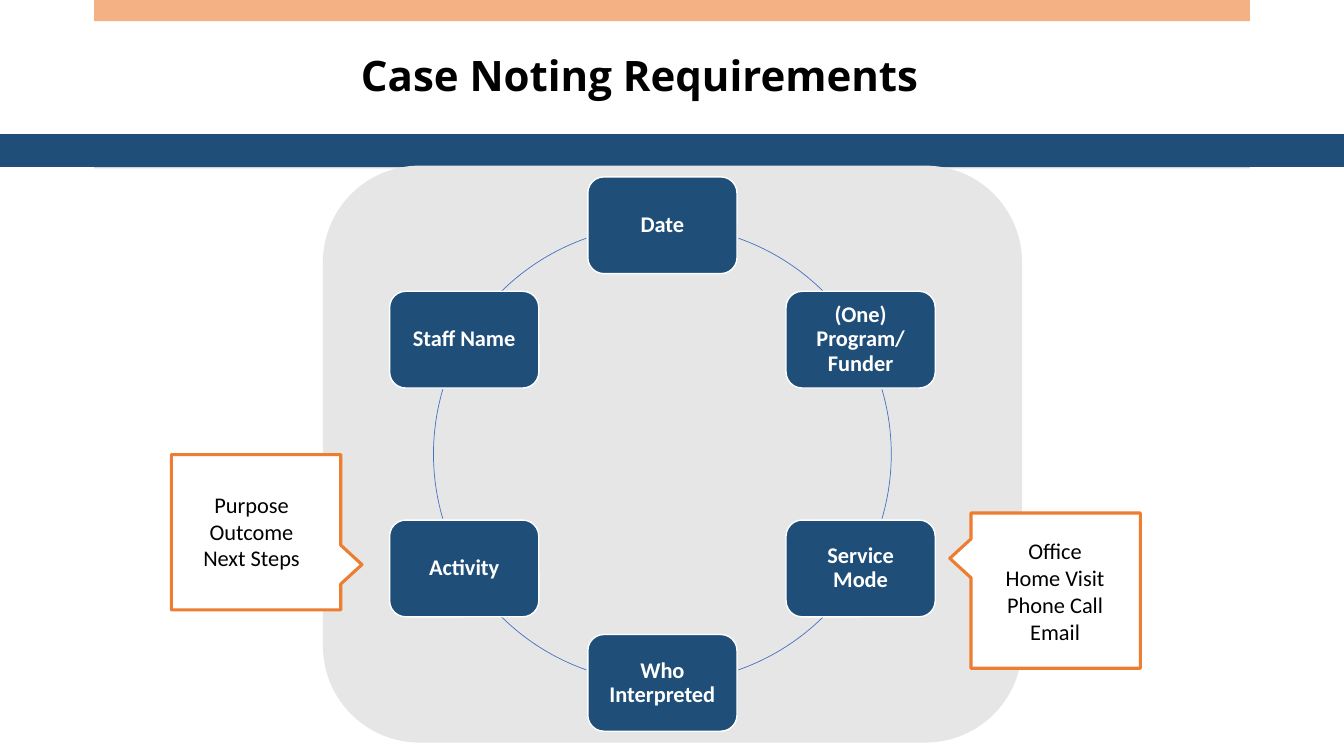
from dataclasses import dataclass
from math import cos, radians, sin

from pptx import Presentation
from pptx.dml.color import RGBColor
from pptx.enum.shapes import MSO_SHAPE
from pptx.enum.text import MSO_ANCHOR, MSO_AUTO_SIZE, PP_ALIGN
from pptx.util import Inches, Pt


@dataclass(frozen=True)
class Theme:
    navy: str = "1F4E79"
    peach: str = "F4B183"
    orange: str = "ED7D31"
    blue: str = "4472C4"
    panel: str = "E7E6E6"
    rule: str = "D5D5D5"
    white: str = "FFFFFF"
    black: str = "000000"
    title_font: str = "Open Sans"
    body_font: str = "Calibri"
    title_size: int = 30
    body_size: int = 16


THEME = Theme()
SLIDE_WIDTH, SLIDE_HEIGHT = 13.33, 7.5
STEPS = ["Date", "(One) Program/ Funder", "Service Mode",
         "Who Interpreted", "Activity", "Staff Name"]
NODE_WIDTH, NODE_HEIGHT = 1.48, 0.96
# Middle and half sweep, in degrees clockwise from east, of each visible arc
ARCS = [(302, 12.6), (0, 16.4), (58, 12.6), (122, 12.6), (180, 16.4), (238, 12.6)]


def add_box(slide, preset, box, fill=None, line=None, line_width=1):
    shape = slide.shapes.add_shape(preset, *map(Inches, box))
    shape.shadow.inherit = False
    if fill:
        shape.fill.solid()
        shape.fill.fore_color.rgb = RGBColor.from_string(fill)
    else:
        shape.fill.background()
    if line:
        shape.line.color.rgb = RGBColor.from_string(line)
        shape.line.width = Pt(line_width)
    else:
        shape.line.fill.background()
    return shape


def write(text_frame, text, font, size, color, bold=False, line_spacing=None):
    """Set centred text, one paragraph for each line of text."""
    text_frame.word_wrap = True
    text_frame.text = text
    for paragraph in text_frame.paragraphs:
        paragraph.alignment = PP_ALIGN.CENTER
        if line_spacing:
            paragraph.line_spacing = line_spacing
        for run in paragraph.runs:
            run.font.name = font
            run.font.size = Pt(size)
            run.font.bold = bold
            run.font.color.rgb = RGBColor.from_string(color)


def add_header(slide, left, top, width, height):
    margin = 0.07 * width
    inner_width = width - 2 * margin
    bar_top = top + 0.81 * height
    add_box(slide, MSO_SHAPE.RECTANGLE, (left + margin, top, inner_width, 0.21), THEME.peach)
    add_box(slide, MSO_SHAPE.RECTANGLE, (left + margin, top + height, inner_width, 0.02),
            THEME.rule)
    add_box(slide, MSO_SHAPE.RECTANGLE, (left, bar_top, width, 0.31), THEME.navy, THEME.navy)

    title = slide.shapes.title
    title.left, title.top = Inches(left + 1.97), Inches(top + 0.2)
    title.width, title.height = Inches(8.75), Inches(1.15)
    title.text_frame.auto_size = MSO_AUTO_SIZE.NONE
    title.text_frame.vertical_anchor = MSO_ANCHOR.MIDDLE
    write(title.text_frame, "Case Noting Requirements", THEME.title_font,
          THEME.title_size, THEME.black, bold=True, line_spacing=0.9)


def add_node(slide, center_x, center_y, text):
    box = (center_x - NODE_WIDTH / 2, center_y - NODE_HEIGHT / 2, NODE_WIDTH, NODE_HEIGHT)
    node = add_box(slide, MSO_SHAPE.ROUNDED_RECTANGLE, box, THEME.navy, THEME.white)
    frame = node.text_frame
    frame.margin_left = frame.margin_right = Inches(0.07)
    frame.margin_top = frame.margin_bottom = Inches(0.07)
    frame.vertical_anchor = MSO_ANCHOR.MIDDLE
    write(frame, text, THEME.body_font, THEME.body_size, THEME.white,
          bold=True, line_spacing=0.9)


def add_cycle(slide, left, top, width, height):
    """Draw the grey panel with the steps evenly spaced on a ring."""
    add_box(slide, MSO_SHAPE.ROUNDED_RECTANGLE, (left, top, width, height),
            THEME.panel, THEME.panel)
    center_x, center_y = left + width / 2 - 0.1, top + height / 2
    radius = 2.27
    ring = (center_x - radius, center_y - radius, 2 * radius, 2 * radius)
    for middle, half_sweep in ARCS:
        arc = add_box(slide, MSO_SHAPE.ARC, ring, line=THEME.blue, line_width=0.5)
        for index, angle in enumerate((middle - half_sweep, middle + half_sweep)):
            # Angles are 60000ths of a degree; adjustments are 100000ths
            arc.adjustments[index] = angle % 360 * 0.6
    for index, text in enumerate(STEPS):
        angle = radians(index * 360 / len(STEPS) - 90)
        add_node(slide, center_x + radius * cos(angle), center_y + radius * sin(angle), text)


def add_callout(slide, left, top, width, height, rotation, lines, text_box):
    """Draw a callout turned sideways, with upright text in its own box."""
    turned_box = (left + (width - height) / 2, top + (height - width) / 2, height, width)
    callout = add_box(slide, MSO_SHAPE.RECTANGULAR_CALLOUT, turned_box,
                      THEME.white, THEME.orange, 2.25)
    callout.rotation = rotation
    offset_x, offset_y, text_width, text_height = text_box
    label = slide.shapes.add_textbox(Inches(left + offset_x), Inches(top + offset_y),
                                     Inches(text_width), Inches(text_height))
    write(label.text_frame, "\n".join(lines), THEME.body_font, THEME.body_size, THEME.black)


def main():
    presentation = Presentation()
    presentation.slide_width = Inches(SLIDE_WIDTH)
    presentation.slide_height = Inches(SLIDE_HEIGHT)
    slide = presentation.slides.add_slide(presentation.slide_layouts[5])
    add_header(slide, 0, 0, SLIDE_WIDTH, 0.22 * SLIDE_HEIGHT)
    add_cycle(slide, 3.21, 0.22 * SLIDE_HEIGHT, 6.92, 5.71)
    add_callout(slide, 9.63, 5.09, 1.68, 1.54, 90,
                ["Office", "Home Visit", "Phone Call", "Email"], (0.12, 0.19, 1.43, 1.18))
    add_callout(slide, 1.7, 4.51, 1.68, 1.54, 270,
                ["Purpose", "Outcome", "Next Steps"], (0.08, 0.31, 1.43, 0.91))
    presentation.save("out.pptx")


if __name__ == "__main__":
    main()
